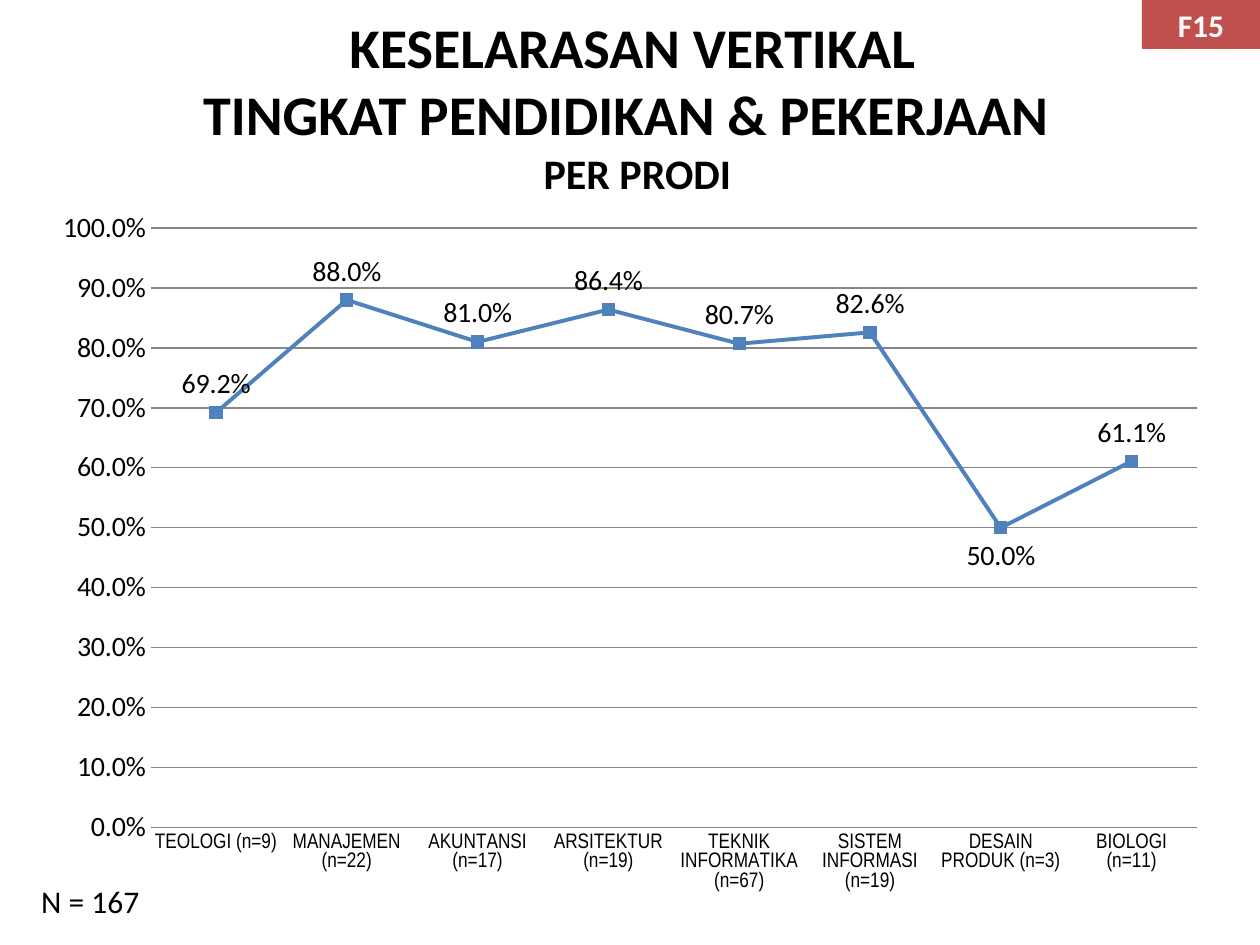
import copy
from dataclasses import dataclass

import pptx
import pptx.chart.data
import pptx.dml.color
import pptx.enum.chart
import pptx.enum.shapes
import pptx.enum.text
import pptx.util

Pt = pptx.util.Pt
RGBColor = pptx.dml.color.RGBColor
ALIGN = pptx.enum.text.PP_ALIGN
LABEL = pptx.enum.chart.XL_LABEL_POSITION

BLACK = RGBColor(0x00, 0x00, 0x00)
WHITE = RGBColor(0xFF, 0xFF, 0xFF)
RED = RGBColor(0xC0, 0x50, 0x4D)
BLUE = RGBColor(0x4F, 0x81, 0xBD)
GREY = RGBColor(0x86, 0x86, 0x86)


@dataclass
class Program:
    name: str
    respondents: int
    aligned: float
    label_below: bool = False


PROGRAMS = [
    Program("TEOLOGI", 9, 0.692),
    Program("MANAJEMEN", 22, 0.88),
    Program("AKUNTANSI", 17, 0.81),
    Program("ARSITEKTUR", 19, 0.864),
    Program("TEKNIK INFORMATIKA", 67, 0.807),
    Program("SISTEM INFORMASI", 19, 0.826),
    Program("DESAIN PRODUK", 3, 0.5, label_below=True),
    Program("BIOLOGI", 11, 0.611),
]


def style_font(font, size: float, color=BLACK, bold=False, name="Calibri") -> None:
    font.name, font.size, font.bold = name, Pt(size), bold
    font.color.rgb = color


def write(frame, text: str, *, size: float, color=BLACK, bold=False,
          align=ALIGN.LEFT, anchor=pptx.enum.text.MSO_ANCHOR.MIDDLE) -> None:
    """Append text to the first paragraph; a newline is a line break."""
    frame.vertical_anchor = anchor
    paragraph = frame.paragraphs[0]
    paragraph.alignment = align
    for index, line in enumerate(text.split("\n")):
        if index:
            paragraph.add_line_break()
            # The break takes the same size as the line it ends
            paragraph._p[-1].append(copy.deepcopy(run._r.rPr))
        if line:
            run = paragraph.add_run()
            run.text = line
            style_font(run.font, size, color, bold)


def add_title(slide) -> None:
    title = slide.shapes.title
    title.left, title.top, title.width, title.height = Pt(37.5), Pt(30), Pt(648), Pt(60)
    frame = title.text_frame
    frame.auto_size = pptx.enum.text.MSO_AUTO_SIZE.NONE
    write(frame, "KESELARASAN VERTIKAL\nTINGKAT PENDIDIKAN & PEKERJAAN \n",
          size=32, bold=True, align=ALIGN.CENTER)
    write(frame, " PER PRODI", size=24, bold=True, align=ALIGN.CENTER)


def add_code_tag(slide) -> None:
    tag = slide.shapes.add_shape(pptx.enum.shapes.MSO_SHAPE.RECTANGLE,
                                 Pt(652.5), Pt(0), Pt(67.5), Pt(28))
    tag.shadow.inherit = False
    tag.fill.solid()
    tag.fill.fore_color.rgb = RED
    tag.line.fill.background()
    write(tag.text_frame, "F15", size=18, color=WHITE, bold=True, align=ALIGN.CENTER)


def add_total(slide) -> None:
    total = slide.shapes.add_textbox(Pt(16.5), Pt(500.5), Pt(71.5), Pt(29))
    total.text_frame.word_wrap = False
    count = sum(program.respondents for program in PROGRAMS)
    write(total.text_frame, f"N = {count}", size=18,
          anchor=pptx.enum.text.MSO_ANCHOR.TOP)


def format_axes(chart) -> None:
    category, value = chart.category_axis, chart.value_axis
    for axis in (category, value):
        axis.major_tick_mark = axis.minor_tick_mark = pptx.enum.chart.XL_TICK_MARK.NONE
    style_font(category.tick_labels.font, 12, name="Arial Narrow")
    category.format.line.color.rgb = GREY
    style_font(value.tick_labels.font, 16)
    value.tick_labels.number_format = "0.0%"
    value.tick_labels.number_format_is_linked = False
    value.minimum_scale, value.maximum_scale, value.major_unit = 0, 1, 0.1
    value.format.line.fill.background()
    value.has_major_gridlines = True
    value.major_gridlines.format.line.color.rgb = GREY
    value.major_gridlines.format.line.width = Pt(0.75)


def format_series(series) -> None:
    series.smooth = False
    series.format.line.color.rgb = BLUE
    series.format.line.width = Pt(2.25)
    marker = series.marker
    marker.style = pptx.enum.chart.XL_MARKER_STYLE.SQUARE
    marker.size = 7
    marker.format.fill.solid()
    marker.format.fill.fore_color.rgb = BLUE
    marker.format.line.color.rgb = BLUE

    labels = series.data_labels
    labels.show_value = True
    labels.number_format = "0.0%"
    labels.number_format_is_linked = False
    labels.position = LABEL.ABOVE
    style_font(labels.font, 16)
    for index, program in enumerate(PROGRAMS):
        if program.label_below:
            label = series.points[index].data_label
            style_font(label.font, 16)
            label.position = LABEL.BELOW


def add_alignment_chart(slide) -> None:
    data = pptx.chart.data.CategoryChartData(number_format="0.0%")
    data.categories = [f"{p.name} (n={p.respondents})" for p in PROGRAMS]
    data.add_series("Series 1", [p.aligned for p in PROGRAMS])
    chart = slide.shapes.add_chart(
        pptx.enum.chart.XL_CHART_TYPE.LINE_MARKERS,
        Pt(22.5), Pt(112.5), Pt(675), Pt(405), data).chart
    chart.has_title = chart.has_legend = False
    style_font(chart.font, 10)
    chart.plots[0].vary_by_categories = False
    format_axes(chart)
    format_series(chart.plots[0].series[0])


def main() -> None:
    deck = pptx.Presentation()
    deck.slide_width, deck.slide_height = Pt(720), Pt(540)
    slide = deck.slides.add_slide(deck.slide_layouts[5])
    add_title(slide)
    add_total(slide)
    add_code_tag(slide)
    add_alignment_chart(slide)
    deck.save("out.pptx")


if __name__ == "__main__":
    main()
